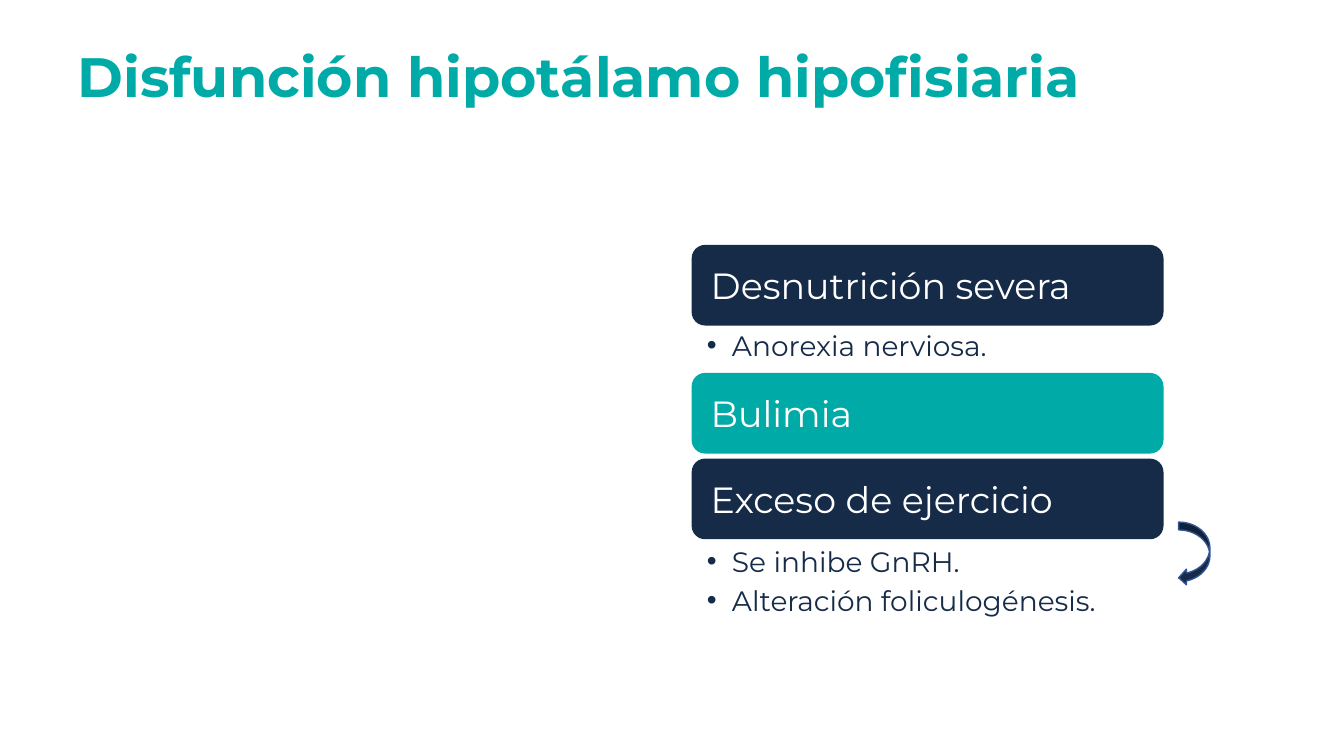
from lxml import etree
from pptx import Presentation
from pptx.dml.color import RGBColor
from pptx.enum.shapes import MSO_SHAPE
from pptx.enum.text import MSO_ANCHOR, PP_ALIGN
from pptx.oxml.ns import qn
from pptx.util import Inches, Pt

ROUNDED = MSO_SHAPE.ROUNDED_RECTANGLE
CURVED_ARROW = MSO_SHAPE.CURVED_LEFT_ARROW
TOP, MIDDLE = MSO_ANCHOR.TOP, MSO_ANCHOR.MIDDLE
LEFT, CENTER = PP_ALIGN.LEFT, PP_ALIGN.CENTER

FONT = "Montserrat"
NAVY, TEAL, WHITE, OUTLINE = "152B48", "00AAA7", "FFFFFF", "325491"
LIST_LEFT, LIST_WIDTH, BAR_HEIGHT = 6.86, 4.68, 0.8

CAUSES = [
    (2.43, NAVY, "Desnutrición severa"),
    (3.7, TEAL, "Bulimia"),
    (4.55, NAVY, "Exceso de ejercicio"),
]
DETAILS = [
    (3.23, 0.47, ["Anorexia nerviosa."]),
    (5.37, 0.91, ["Se inhibe GnRH.", "Alteración foliculogénesis."]),
]


def color(value):
    return RGBColor.from_string(value)


def set_frame(tf, anchor, left, top, right, bottom):
    tf.word_wrap = True
    tf.vertical_anchor = anchor
    tf.margin_left, tf.margin_top = Inches(left), Inches(top)
    tf.margin_right, tf.margin_bottom = Inches(right), Inches(bottom)


def add_run(p, text, size, fill, bold=False):
    r = p.add_run()
    r.text = text
    r.font.name = FONT
    r.font.size = Pt(size)
    r.font.bold = bold
    r.font.color.rgb = color(fill)


def add_filled(slide, kind, left, top, width, height, fill):
    sp = slide.shapes.add_shape(
        kind, Inches(left), Inches(top), Inches(width), Inches(height))
    sp.shadow.inherit = False
    sp.fill.solid()
    sp.fill.fore_color.rgb = color(fill)
    sp.line.fill.background()
    return sp


def add_text_frame(slide, left, top, width, height):
    return slide.shapes.add_textbox(
        Inches(left), Inches(top), Inches(width), Inches(height)).text_frame


def add_title(slide, text):
    tf = add_text_frame(slide, 0.6, 0.16, 10.61, 1.25)
    set_frame(tf, MIDDLE, 0.1, 0.05, 0.43, 0.05)
    p = tf.paragraphs[0]
    p.alignment = CENTER
    p.line_spacing = 0.9
    add_run(p, text, 39.6, TEAL, True)


def add_cause(slide, top, fill, text):
    sp = add_filled(slide, ROUNDED, LIST_LEFT, top, LIST_WIDTH, BAR_HEIGHT, fill)
    tf = sp.text_frame
    set_frame(tf, MIDDLE, 0.15, 0.15, 0.15, 0.15)
    p = tf.paragraphs[0]
    p.alignment = LEFT
    add_run(p, text, 26, WHITE)


def add_bullet(p):
    pPr = p._p.get_or_add_pPr()
    pPr.set("marL", str(Inches(0.25)))
    pPr.set("indent", str(Inches(-0.25)))
    etree.SubElement(pPr, qn("a:buFont")).set("typeface", "Arial")
    etree.SubElement(pPr, qn("a:buChar")).set("char", "•")


def add_details(slide, top, height, items):
    tf = add_text_frame(slide, LIST_LEFT, top, LIST_WIDTH, height)
    set_frame(tf, TOP, 0.15, 0.03, 0.16, 0.03)
    for i, item in enumerate(items):
        p = tf.add_paragraph() if i else tf.paragraphs[0]
        add_bullet(p)
        p.level = 1
        p.space_after = Pt(4)
        add_run(p, item, 20, NAVY)


def add_effect_arrow(slide):
    sp = add_filled(slide, CURVED_ARROW, 11.69, 5.18, 0.31, 0.63, NAVY)
    sp.line.color.rgb = color(OUTLINE)
    sp.line.width = Pt(1)


def main():
    prs = Presentation()
    prs.slide_width, prs.slide_height = Inches(13.33), Inches(7.5)
    slide = prs.slides.add_slide(prs.slide_layouts[6])
    add_title(slide, "Disfunción hipotálamo hipofisiaria")
    for cause in CAUSES:
        add_cause(slide, *cause)
    for details in DETAILS:
        add_details(slide, *details)
    add_effect_arrow(slide)
    prs.save("out.pptx")


if __name__ == "__main__":
    main()
